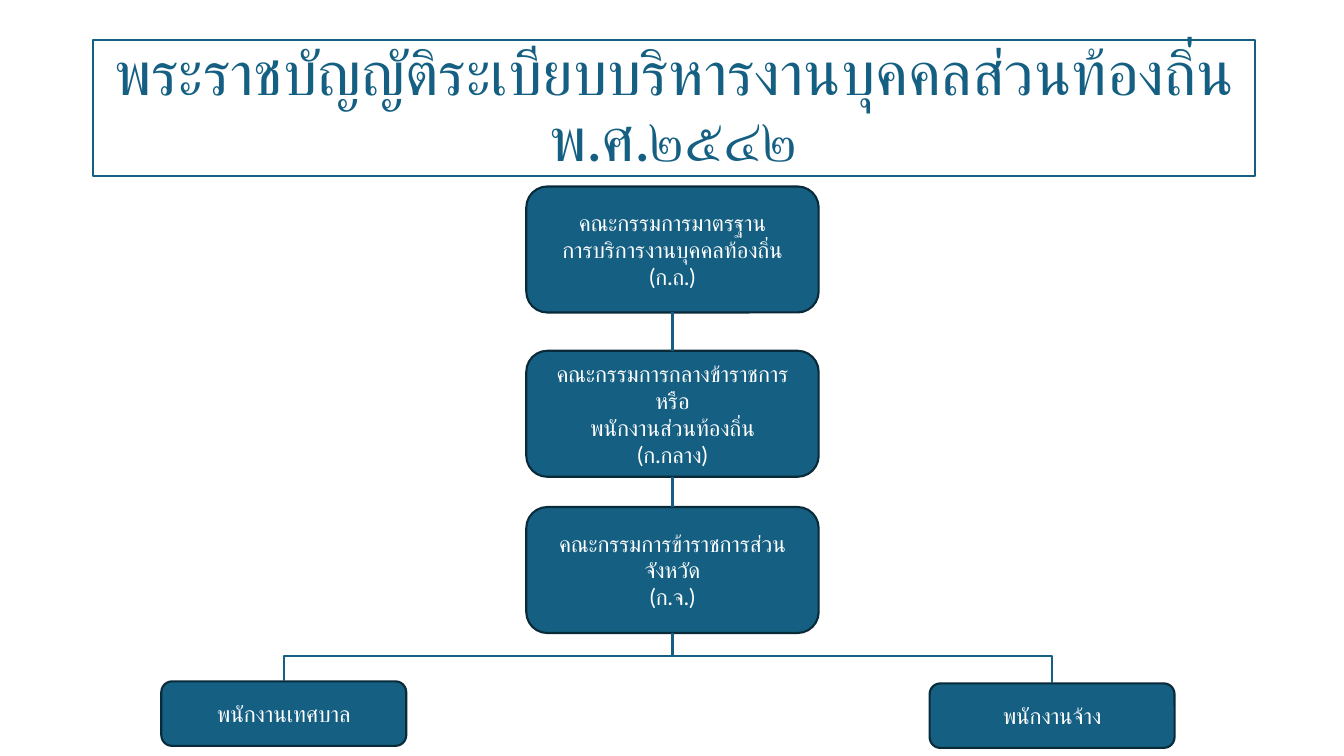
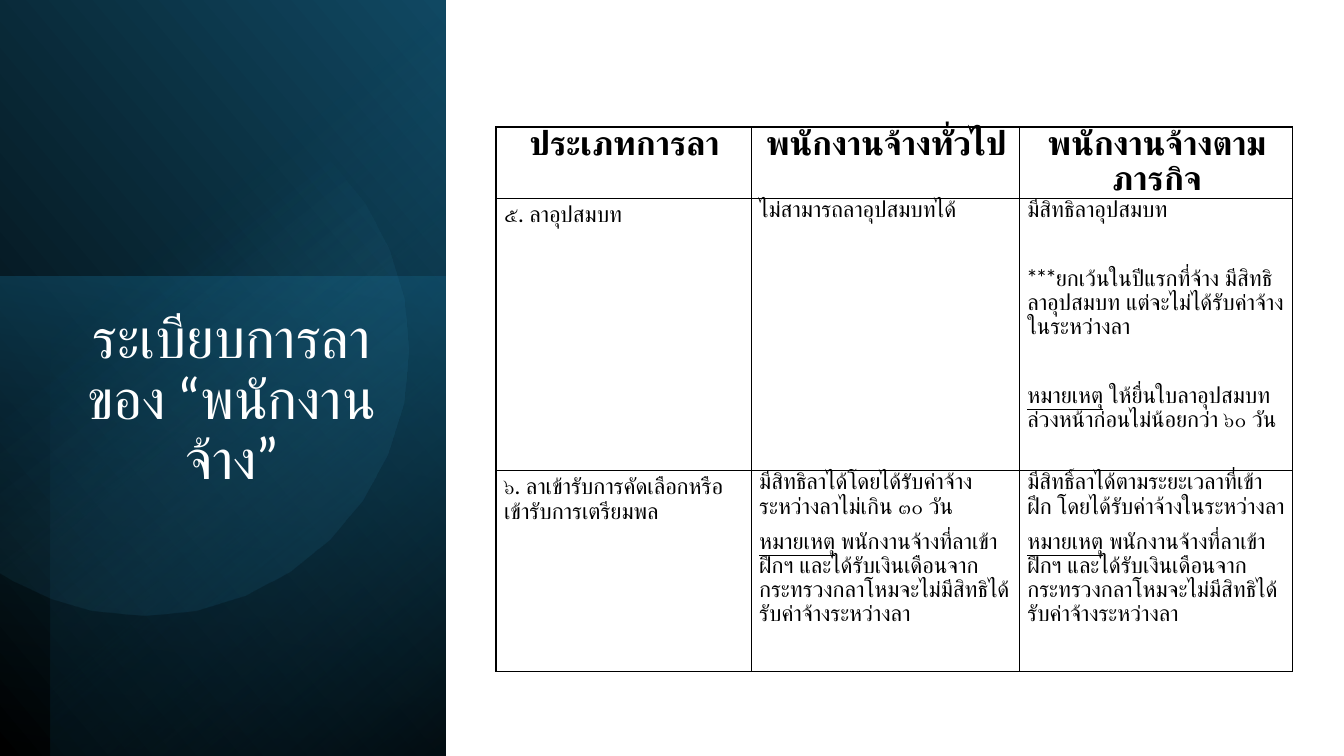
from lxml import etree
from pptx import Presentation
from pptx import util as u
from pptx.dml.color import RGBColor
from pptx.enum import shapes, text
from pptx.oxml.ns import qn

COLORS = {"white": "FFFFFF", "black": "000000", "teal": "156082", "edge": "092A39",
          "deep": "104862", "night": "0B3041", "sky": "46B1E1"}
FONT = "Lato"
CENTER = text.PP_ALIGN.CENTER
MIDDLE = text.MSO_ANCHOR.MIDDLE
NOTE = ("หมายเหตุ", True)
ARMY_NOTE = (NOTE, (" พนักงานจ้างที่ลาเข้าฝึกฯ และได้รับเงินเดือนจาก"
                    "กระทรวงกลาโหมจะไม่มีสิทธิได้รับค่าจ้างระหว่างลา", False))
HEADERS = ["ประเภทการลา", "พนักงานจ้างทั่วไป", "พนักงานจ้างตามภารกิจ"]
LEAVE_ROWS = [
    [[(("๕. ลาอุปสมบท", False),)],
     [(("ไม่สามารถลาอุปสมบทได้", False),)],
     [(("มีสิทธิลาอุปสมบท", False),),
      (("***ยกเว้นในปีแรกที่จ้าง มีสิทธิลาอุปสมบท แต่จะไม่ได้รับค่าจ้างในระหว่างลา", False),),
      (NOTE, (" ให้ยื่นใบลาอุปสมบทล่วงหน้าก่อนไม่น้อยกว่า ๖๐ วัน", False))]],
    [[(("๖. ลาเข้ารับการคัดเลือกหรือเข้ารับการเตรียมพล", False),)],
     [(("มีสิทธิลาได้โดยได้รับค่าจ้างระหว่างลาไม่เกิน ๓๐ วัน", False),), ARMY_NOTE],
     [(("มีสิทธิ์ลาได้ตามระยะเวลาที่เข้าฝึก โดยได้รับค่าจ้างในระหว่างลา", False),), ARMY_NOTE]],
]
ROW_GAPS = [24, 0]
COMMITTEES = [
    (1.85, ["คณะกรรมการมาตรฐาน", "การบริการงานบุคคลท้องถิ่น", "(ก.ถ.)"]),
    (3.48, ["คณะกรรมการกลางข้าราชการหรือ", "พนักงานส่วนท้องถิ่น", "(ก.กลาง)"]),
    (5.03, ["คณะกรรมการข้าราชการส่วนจังหวัด", "(ก.จ.)"]),
]
STAFF = [(1.6, 6.76, "พนักงานเทศบาล"), (9.22, 6.78, "พนักงานจ้าง")]


def rgb(name):
    """Return the palette colour with this name."""
    return RGBColor.from_string(COLORS[name])


def inches(*values):
    """Convert numbers to lengths."""
    return [u.Inches(v) for v in values]


def add_run(p, words, size, color, bold=False, underline=False):
    """Add one styled run to a paragraph."""
    r = p.add_run()
    r.text = words
    r.font.size, r.font.name = u.Pt(size), FONT
    r.font.bold, r.font.underline = bold, underline
    r.font.color.rgb = rgb(color)
    etree.SubElement(r.font._element, qn("a:cs"), typeface=FONT)


def add_lines(tf, lines, size, color, spacing=1.0):
    """Fill a text frame with centred paragraphs."""
    tf.word_wrap = True
    for i, line in enumerate(lines):
        p = tf.add_paragraph() if i else tf.paragraphs[0]
        p.alignment, p.line_spacing = CENTER, spacing
        add_run(p, line, size, color)


def add_title(slide, box, words, size, color, anchor):
    """Add a title text box."""
    sp = slide.shapes.add_textbox(*inches(*box))
    sp.text_frame.vertical_anchor = anchor
    add_lines(sp.text_frame, [words], size, color, 0.9)
    return sp


def set_line(sp, color):
    """Give a shape or connector the common outline."""
    sp.line.color.rgb = rgb(color)
    sp.line.width = u.Pt(1.5)


def add_node(slide, box, lines):
    """Add one rounded box of the chart."""
    sp = slide.shapes.add_shape(shapes.MSO_SHAPE.ROUNDED_RECTANGLE, *inches(*box))
    sp.shadow.inherit = False
    sp.fill.solid()
    sp.fill.fore_color.rgb = rgb("teal")
    set_line(sp, "edge")
    sp.text_frame.vertical_anchor = MIDDLE
    add_lines(sp.text_frame, lines, 16, "white")
    return sp


def add_link(slide, kind, start, end):
    """Add a connector without a shadow."""
    c = slide.shapes.add_connector(kind, *inches(*start, *end))
    set_line(c, "teal")
    etree.SubElement(c._element.spPr, qn("a:effectLst"))
    return c


def add_fork(slide, left, right, y):
    """Join the tops of two boxes by an elbow whose bar lies at height y."""
    ends = [(sp.left + sp.width // 2, sp.top) for sp in (left, right)]
    (x1, y1), (x2, y2) = ends
    c = add_link(slide, shapes.MSO_CONNECTOR.ELBOW, (0, 0), (1, 1))
    c.begin_connect(left, 0)
    c.end_connect(right, 0)
    c.width, c.height = y2 - y1, x2 - x1
    c.left = (x1 + x2 - c.width) // 2
    c.top = (y1 + y2 - c.height) // 2
    xfrm = c._element.spPr.find(qn("a:xfrm"))
    xfrm.set("rot", str(270 * 60000))
    xfrm.set("flipH", "1")
    guides = c._element.spPr.find(qn("a:prstGeom")).find(qn("a:avLst"))
    bend = round((u.Inches(y) - y1) / (y2 - y1) * 100000)
    etree.SubElement(guides, qn("a:gd"), name="adj1", fmla=f"val {bend}")


def committee_chart(slide, x, width, height):
    """Draw the column of committees and the staff below it."""
    straight = shapes.MSO_CONNECTOR.STRAIGHT
    mid, bar = x + width / 2, 6.51
    nodes = [add_node(slide, (x, y, width, height), lines) for y, lines in COMMITTEES]
    staff = [add_node(slide, (sx, sy, 2.43, 0.64), [name]) for sx, sy, name in STAFF]
    for upper, lower in zip(nodes, nodes[1:]):
        c = add_link(slide, straight, (mid, 0), (mid, 1))
        c.begin_connect(upper, 2)
        c.end_connect(lower, 0)
    add_fork(slide, *staff, bar)
    stem = add_link(slide, straight, (mid, COMMITTEES[-1][0] + height), (mid, bar))
    stem.begin_connect(nodes[-1], 2)


def set_gradient(sp, stops, angle):
    """Fill with two stops of position, colour and opacity; angle is clockwise."""
    sp.shadow.inherit = False
    sp.line.fill.background()
    sp.fill.gradient()
    sp.fill.gradient_angle = (360 - angle) % 360
    for stop, (position, color, _) in zip(sp.fill.gradient_stops, stops):
        stop.position = position / 100
        stop.color.rgb = rgb(color)
    for gs, (_, _, opacity) in zip(sp._element.iter(qn("a:gs")), stops):
        if opacity < 100:
            etree.SubElement(gs[0], qn("a:alpha"), val=str(opacity * 1000))


def add_panel(slide, box, rotation, flip, stops, angle):
    """Add a turned gradient rectangle."""
    sp = slide.shapes.add_shape(shapes.MSO_SHAPE.RECTANGLE, *inches(*box))
    sp.rotation = rotation
    if flip:
        sp._element.spPr.find(qn("a:xfrm")).set("flipH", "1")
    set_gradient(sp, stops, angle)


def bezier(steps, a, b, c, d):
    """Return points along a cubic curve, without its start."""
    points = []
    for i in range(1, steps + 1):
        t = i / steps
        s = 1 - t
        points.append(tuple(s**3 * k + 3 * s * s * t * m + 3 * s * t * t * n + t**3 * o
                            for k, m, n, o in zip(a, b, c, d)))
    return points


def add_disc(slide):
    """Add the soft disc cut by the left edge of the slide."""
    start = (1.43, 0.84)
    curves = [(2, (1.6, 0.84), (1.78, 0.86), (1.96, 0.89)),
              (8, (3.38, 1.19), (4.29, 2.58), (4, 4)),
              (8, (3.71, 5.42), (2.32, 6.34), (0.9, 6.05)),
              (2, (0.63, 5.99), (0.38, 5.9), (0.15, 5.77))]
    points = [start]
    for steps, *curve in curves:
        points += bezier(steps, points[-1], *curve)
    points += [(0, 5.68), (0, 1.26), (0.2, 1.15)]
    points += bezier(2, points[-1], (0.57, 0.95), (0.99, 0.84), start)
    builder = slide.shapes.build_freeform(*inches(*start), scale=1.0)
    builder.add_line_segments([inches(*pt) for pt in points[1:-1]], close=True)
    set_gradient(builder.convert_to_shape(),
                 [(39, "sky", 0), (100, "deep", 26)], 51.6)


def side_band(slide):
    """Draw the dark band with its title."""
    add_panel(slide, (-1.55, 1.55, 7.52, 4.42), 90, True,
              [(0, "black", 100), (100, "deep", 100)], 310)
    add_panel(slide, (-0.17, 2.91, 4.76, 4.42), 270, False,
              [(0, "teal", 50), (100, "night", 0)], 190)
    add_panel(slide, (-1.29, 1.79, 7.5, 3.92), 270, True,
              [(0, "black", 59), (69, "teal", 0)], 220)
    add_disc(slide)
    add_title(slide, (0.72, 3.03, 3.15, 3.36), "ระเบียบการลาของ “พนักงานจ้าง”",
              40, "white", text.MSO_ANCHOR.TOP)


def fill_cell(cell, paragraphs, size, bold, align, gap=0, spacing=0.9, top=0):
    """Write a bordered cell; gap is the extra space between paragraphs."""
    cell.margin_left, cell.margin_right = inches(0.08, 0.06)
    cell.margin_top, cell.margin_bottom = inches(top, 0)
    tc_pr = cell._tc.get_or_add_tcPr()
    for side in ("lnL", "lnR", "lnT", "lnB"):
        ln = etree.SubElement(tc_pr, qn(f"a:{side}"), w=str(u.Pt(1)))
        solid = etree.SubElement(ln, qn("a:solidFill"))
        etree.SubElement(solid, qn("a:srgbClr"), val=COLORS["black"])
    cell.fill.solid()
    cell.fill.fore_color.rgb = rgb("white")
    tf = cell.text_frame
    for i, runs in enumerate(paragraphs):
        p = tf.add_paragraph() if i else tf.paragraphs[0]
        p.alignment, p.line_spacing, p.space_after = align, spacing, u.Pt(8)
        p.space_before = u.Pt(gap if i else 0)
        for words, underline in runs:
            add_run(p, words, size, "black", bold, underline)


def leave_table(slide, x, y, widths, heights):
    """Draw the table of leave rules."""
    frame = slide.shapes.add_table(len(heights), len(widths),
                                   *inches(x, y, sum(widths), sum(heights)))
    table = frame.table
    table.first_row = table.horz_banding = False
    for col, width in zip(table.columns, widths):
        col.width = u.Inches(width)
    for row, height in zip(table.rows, heights):
        row.height = u.Inches(height)
    for c, header in enumerate(HEADERS):
        fill_cell(table.cell(0, c), [((header, False),)], 24, True, CENTER, spacing=0.88)
    for r, (row, gap) in enumerate(zip(LEAVE_ROWS, ROW_GAPS), 1):
        for c, paragraphs in enumerate(row):
            spacing, top = (0.9, 0) if c else (0.93, 0.04)
            fill_cell(table.cell(r, c), paragraphs, 16, False, text.PP_ALIGN.LEFT,
                      gap, spacing, top)


def committee_slide(slide):
    """Build the slide of the committees."""
    sp = add_title(slide, (0.92, 0.4, 11.53, 1.35),
                   "พระราชบัญญัติระเบียบบริหารงานบุคคลส่วนท้องถิ่น พ.ศ.๒๕๔๒", 44, "teal", MIDDLE)
    sp.fill.solid()
    sp.fill.fore_color.rgb = rgb("white")
    set_line(sp, "teal")
    committee_chart(slide, 5.22, 2.9, 1.25)


def leave_slide(slide):
    """Build the slide of the leave rules."""
    side_band(slide)
    leave_table(slide, 4.92, 1.26, [2.53, 2.66, 2.71], [0.71, 2.7, 1.99])


def main():
    """Build and save the presentation."""
    prs = Presentation()
    prs.slide_width, prs.slide_height = inches(13.33, 7.5)
    for build in (committee_slide, leave_slide):
        build(prs.slides.add_slide(prs.slide_layouts[6]))
    prs.save("out.pptx")


if __name__ == "__main__":
    main()
